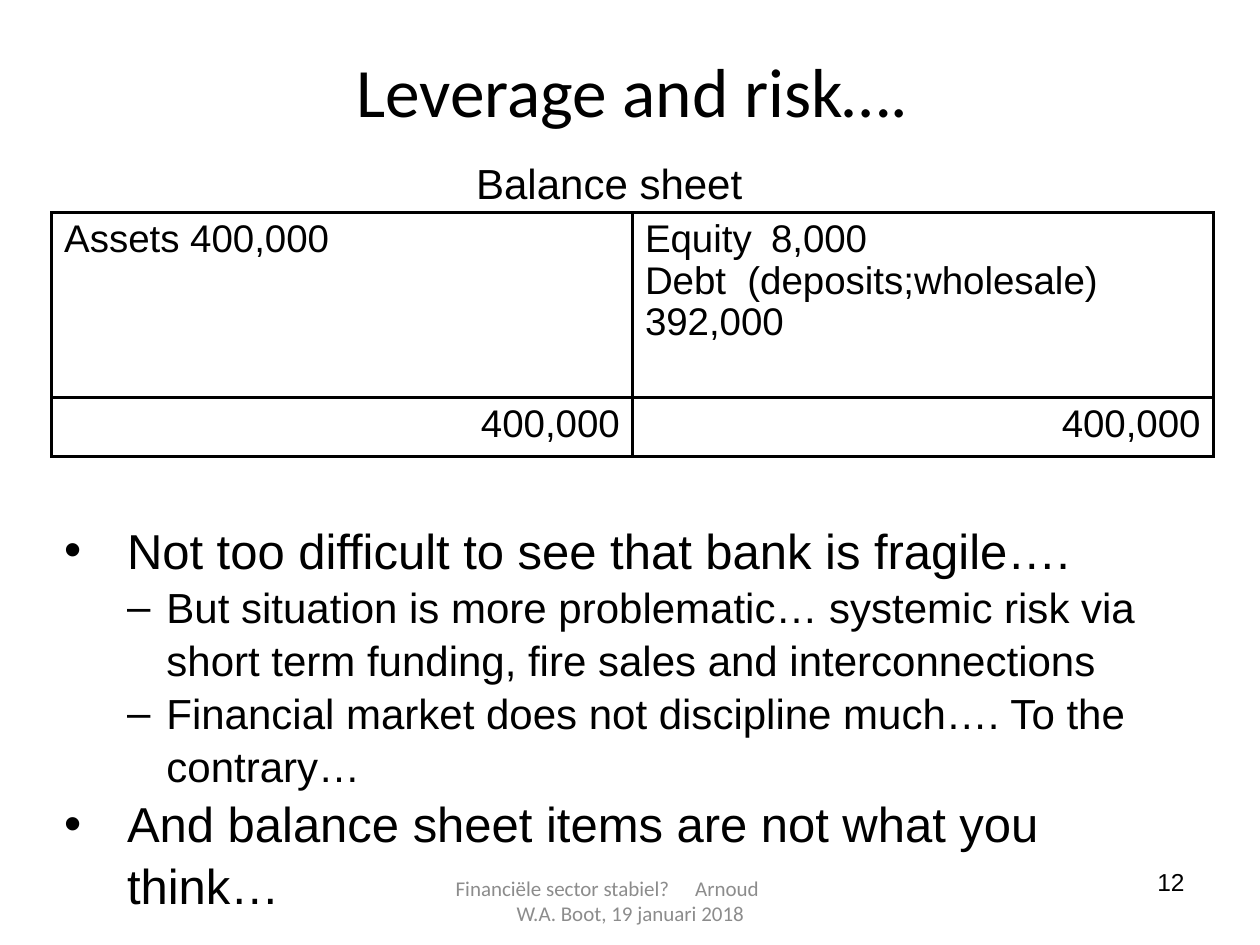
"""Build the slide on leverage and risk with a balance sheet and comments."""

from dataclasses import dataclass

from lxml.etree import SubElement
from pptx import Presentation
from pptx.dml.color import RGBColor
from pptx.enum.text import MSO_ANCHOR, PP_ALIGN
from pptx.oxml.ns import qn
from pptx.slide import Slide
from pptx.table import _Cell
from pptx.text.text import TextFrame, _Paragraph
from pptx.util import Pt


@dataclass(frozen=True)
class Theme:
    text: RGBColor = RGBColor(0, 0, 0)
    muted: RGBColor = RGBColor(0x8C, 0x8C, 0x8C)
    border: str = "000000"
    border_width: float = 2
    heading_font: str = "Calibri"
    body_font: str = "Arial"
    title_size: float = 39.6
    bullet_size: float = 28
    sub_size: float = 24
    table_size: float = 22
    number_size: float = 14
    footer_size: float = 12
    body_spacing: float = 1.05
    table_spacing: float = 0.97


@dataclass(frozen=True)
class Box:
    left: float
    top: float
    width: float
    height: float


@dataclass(frozen=True)
class Line:
    text: str
    size: float
    font: str
    color: RGBColor
    align: PP_ALIGN = PP_ALIGN.LEFT
    spacing: float = 1.0
    margin: float = 0
    indent: float = 0
    bullet: str = ""
    tab: float = 0


THEME = Theme()


def body_line(text: str, size: float, **options) -> Line:
    return Line(text, size, THEME.body_font, THEME.text, **options)


def table_line(text: str, **options) -> Line:
    return body_line(text, THEME.table_size, spacing=THEME.table_spacing, **options)


def main_point(text: str) -> Line:
    return body_line(text, THEME.bullet_size, spacing=THEME.body_spacing,
                     margin=36, indent=-36, bullet="•")


def sub_point(text: str) -> Line:
    return body_line(text, THEME.sub_size, spacing=THEME.body_spacing,
                     margin=58.5, indent=-22.5, bullet="–")


def footer_line(text: str, **options) -> Line:
    return Line(text, THEME.footer_size, THEME.heading_font, THEME.muted, **options)


TOTAL = [table_line("400,000", align=PP_ALIGN.RIGHT)]
BALANCE_SHEET = [
    [
        [table_line("Assets\t400,000", tab=144)],
        [table_line("Equity\t8,000", tab=72),
         table_line("Debt  (deposits;wholesale)\v392,000")],
    ],
    [TOTAL, TOTAL],
]
ROW_HEIGHTS = [105.8, 33.8]
POINTS = [
    main_point("Not too difficult to see that bank is fragile…."),
    sub_point("But situation is more problematic… systemic risk via "
              "short term funding, fire sales and interconnections"),
    sub_point("Financial market does not discipline much…. To the contrary…"),
    main_point("And balance sheet items are not what you think…"),
]
FOOTER = [
    footer_line("Financiële sector stabiel?\tArnoud", indent=7.1, tab=169.4),
    footer_line("W.A. Boot, 19 januari 2018", align=PP_ALIGN.CENTER),
]


def format_paragraph(paragraph: _Paragraph, line: Line) -> None:
    paragraph.text = line.text
    paragraph.alignment = line.align
    paragraph.line_spacing = line.spacing
    for run in paragraph.runs:
        run.font.size = Pt(line.size)
        run.font.name = line.font
        run.font.color.rgb = line.color
    properties = paragraph._p.get_or_add_pPr()
    properties.set("marL", str(Pt(line.margin)))
    properties.set("indent", str(Pt(line.indent)))
    if line.bullet:
        SubElement(properties, qn("a:buFont"), typeface=line.font)
        SubElement(properties, qn("a:buChar"), char=line.bullet)
    if line.tab:
        tabs = SubElement(properties, qn("a:tabLst"))
        SubElement(tabs, qn("a:tab"), pos=str(Pt(line.tab)), algn="l")


def fill_text(text_frame: TextFrame, lines: list[Line]) -> None:
    for index, line in enumerate(lines):
        paragraph = text_frame.add_paragraph() if index else text_frame.paragraphs[0]
        format_paragraph(paragraph, line)


def add_text(slide: Slide, box: Box, lines: list[Line],
             anchor: MSO_ANCHOR = MSO_ANCHOR.TOP) -> None:
    shape = slide.shapes.add_textbox(
        Pt(box.left), Pt(box.top), Pt(box.width), Pt(box.height))
    shape.text_frame.word_wrap = True
    shape.text_frame.vertical_anchor = anchor
    fill_text(shape.text_frame, lines)


def set_borders(cell: _Cell) -> None:
    properties = cell._tc.get_or_add_tcPr()
    for index, side in enumerate(("lnL", "lnR", "lnT", "lnB")):
        border = SubElement(properties, qn(f"a:{side}"), w=str(Pt(THEME.border_width)))
        fill = SubElement(border, qn("a:solidFill"))
        SubElement(fill, qn("a:srgbClr"), val=THEME.border)
        properties.insert(index, border)


def add_balance_sheet(slide: Slide, box: Box) -> None:
    table = slide.shapes.add_table(
        len(BALANCE_SHEET), len(BALANCE_SHEET[0]),
        Pt(box.left), Pt(box.top), Pt(box.width), Pt(box.height)).table
    table.first_row = False
    table.horz_banding = False
    for row, height, contents in zip(table.rows, ROW_HEIGHTS, BALANCE_SHEET):
        row.height = Pt(height)
        for cell, lines in zip(row.cells, contents):
            cell.fill.background()
            set_borders(cell)
            fill_text(cell.text_frame, lines)


def main() -> None:
    presentation = Presentation()
    presentation.slide_width = Pt(720)
    presentation.slide_height = Pt(540)
    slide = presentation.slides.add_slide(presentation.slide_layouts[6])
    title = Line("Leverage and risk….", THEME.title_size, THEME.heading_font,
                 THEME.text, PP_ALIGN.CENTER)
    number = body_line("12", THEME.number_size, align=PP_ALIGN.RIGHT)
    caption = body_line("Balance sheet", THEME.sub_size, spacing=THEME.body_spacing)
    add_text(slide, Box(516.2, 491.8, 167.8, 37.4), [number])
    add_text(slide, Box(25.2, 23, 672.5, 56.9), [title], MSO_ANCHOR.MIDDLE)
    add_balance_sheet(slide, Box(29.5, 121.5, 663.8, sum(ROW_HEIGHTS)))
    add_text(slide, Box(265, 85, 208, 36.7), [caption])
    add_text(slide, Box(29.5, 292.3, 663.8, 225.4), POINTS)
    add_text(slide, Box(246.2, 500.4, 228.2, 28.8), FOOTER, MSO_ANCHOR.MIDDLE)
    presentation.save("out.pptx")


if __name__ == "__main__":
    main()
